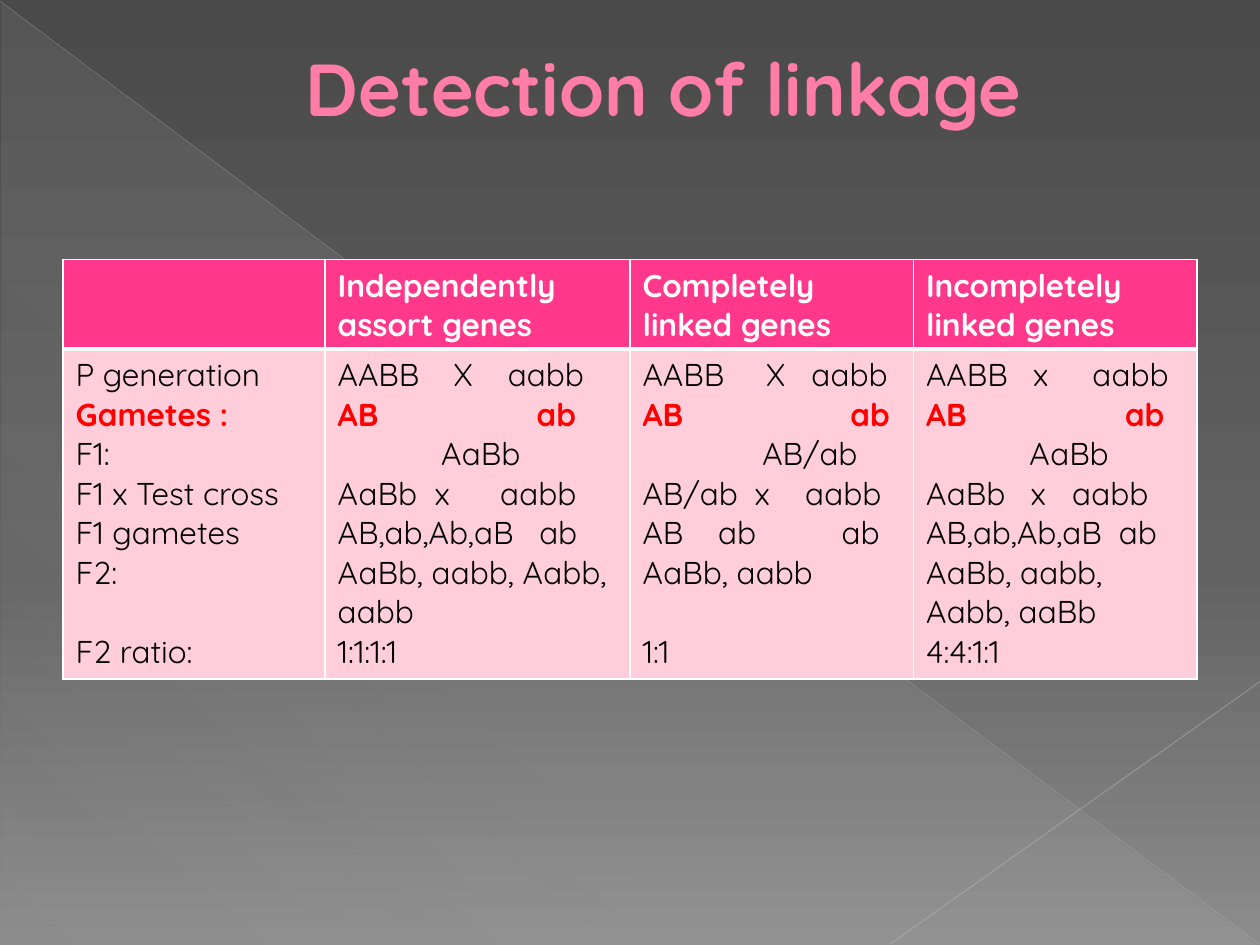
from lxml import etree
from pptx import Presentation
from pptx import util as u
from pptx.dml.color import RGBColor
from pptx.enum import shapes, text
from pptx.oxml import ns, parse_xml

WHITE, BLACK, RED = "FFFFFF", "000000", "FF0000"
HEADER_FILL, BODY_FILL = "FF388C", "FFCEDA"
TITLE_PINK, TITLE_EDGE = "FF7DA7", "B12761"
COLUMN_WIDTHS = [2.08, 2.42, 2.25, 2.25]
ROW_HEIGHTS = [0.71, 2.62]
HEADINGS = ["", "Independently assort genes", "Completely linked genes",
            "Incompletely linked genes"]
LINE_GAP = 22.5

COLUMNS = [
    [("P generation",), ("Gametes :",), ("F1:",), ("F1 x Test cross",),
     ("F1 gametes",), ("F2:",), ("F2 ratio:",)],
    [("AABB\tX\taabb", 0.92, 1.35), ("AB\tab", 1.58), ("\tAaBb", 0.82),
     ("AaBb\tx\taabb", 0.77, 1.29), ("AB,ab,Ab,aB\tab", 1.6),
     ("AaBb, aabb, Aabb, aabb",), ("1:1:1:1",)],
    [("AABB\tX\taabb", 0.98, 1.34), ("AB\tab", 1.65), ("\tAB/ab", 0.95),
     ("AB/ab\tx\taabb", 0.89, 1.29), ("AB\tab\tab", 0.6, 1.58),
     ("AaBb, aabb",), ("1:1",)],
    [("AABB\tx\taabb", 0.85, 1.32), ("AB\tab", 1.58), ("\tAaBb", 0.82),
     ("AaBb\tx\taabb", 0.83, 1.16), ("AB,ab,Ab,aB\tab", 1.53),
     ("AaBb, aabb, Aabb, aaBb",), ("4:4:1:1",)],
]
SHORT_COLUMNS = (0, 2)
GAMETES_ROW, RATIO_ROW = 1, 6


def color(value):
    return RGBColor.from_string(value)


def element(tag, parent, **attributes):
    return etree.SubElement(parent, ns.qn(tag),
                            {key: str(value) for key, value in attributes.items()})


def gradient(stops, angle):
    fill = parse_xml(f"<a:gradFill {ns.nsdecls('a')} rotWithShape='1'/>")
    stop_list = element("a:gsLst", fill)
    for place, value, opacity in stops:
        stop = element("a:gs", stop_list, pos=place * 1000)
        element("a:alpha", element("a:srgbClr", stop, val=value), val=opacity * 1000)
    element("a:lin", fill, ang=angle * 60000, scaled=0)
    return fill


class SlideKit:
    """Draws styled elements on the current slide."""

    def __init__(self, page, font="Quicksand"):
        self.page = page
        self.font = font

    def swap_fill(self, parent, fill):
        solid = parent.find(ns.qn("a:solidFill"))
        parent.replace(solid, fill)

    def background(self, stops, angle):
        self.page.background.fill.solid()
        properties = self.page._element.cSld.find(
            f"{ns.qn('p:bg')}/{ns.qn('p:bgPr')}")
        self.swap_fill(properties, gradient(stops, angle))

    def triangle(self, left, top, width, height, stops, angle):
        shape = self.page.shapes.add_shape(
            shapes.MSO_SHAPE.RIGHT_TRIANGLE,
            *map(u.Inches, (left, top, width, height)))
        shape.shadow.inherit = False
        shape.line.fill.background()
        shape.fill.solid()
        self.swap_fill(shape._element.spPr, gradient(stops, angle))

    def line(self, start, end, value, width, opacity):
        connector = self.page.shapes.add_connector(
            shapes.MSO_CONNECTOR.STRAIGHT, *map(u.Inches, (*start, *end)))
        connector.line.width = u.Pt(width)
        connector.line.color.rgb = color(value)
        properties = connector._element.spPr
        shade = properties.find(f".//{ns.qn('a:srgbClr')}")
        element("a:alpha", shade, val=opacity * 1000)
        element("a:effectLst", properties)

    def add_span(self, para, words, value, size=18, bold=False):
        span = para.add_run()
        span.text = words
        formats = {"name": self.font, "size": u.Pt(size), "bold": bold}
        for key, setting in formats.items():
            setattr(span.font, key, setting)
        span.font.color.rgb = color(value)
        return span

    def title(self, words, left, top, width, height):
        box = self.page.shapes.add_textbox(*map(u.Inches, (left, top, width, height)))
        frame = box.text_frame
        formats = {"word_wrap": True, "vertical_anchor": text.MSO_ANCHOR.TOP,
                   "margin_left": u.Inches(0.63)}
        for key, setting in formats.items():
            setattr(frame, key, setting)
        para = frame.paragraphs[0]
        para.alignment = text.PP_ALIGN.CENTER
        span = self.add_span(para, words, TITLE_PINK, 42, True)
        edge = parse_xml(f"<a:ln {ns.nsdecls('a')} w='{u.Pt(0.5)}'/>")
        element("a:srgbClr", element("a:solidFill", edge), val=TITLE_EDGE)
        span._r.get_or_add_rPr().insert(0, edge)

    def table(self, left, top, widths, heights):
        frame = self.page.shapes.add_table(
            len(heights), len(widths),
            *map(u.Inches, (left, top, sum(widths), sum(heights))))
        for column, width in zip(frame.table.columns, widths):
            column.width = u.Inches(width)
        for row, height in zip(frame.table.rows, heights):
            row.height = u.Inches(height)
        return frame.table

    def cell(self, cell, fill, top, bottom):
        cell.fill.solid()
        cell.fill.fore_color.rgb = color(fill)
        borders = {"L": 1, "R": 1, "T": top, "B": bottom}
        for index, (side, width) in enumerate(borders.items()):
            border = parse_xml(f"<a:ln{side} {ns.nsdecls('a')} w='{u.Pt(width)}'/>")
            element("a:srgbClr", element("a:solidFill", border), val=WHITE)
            cell._tc.tcPr.insert(index, border)

    def tabs(self, para, stops):
        tab_list = element("a:tabLst", para._p.get_or_add_pPr())
        for stop in stops:
            element("a:tab", tab_list, pos=u.Inches(stop), algn="l")


def main():
    deck = Presentation()
    deck.slide_width, deck.slide_height = u.Inches(10), u.Inches(7.5)
    kit = SlideKit(deck.slides.add_slide(deck.slide_layouts[6]))

    kit.background([(0, "4A4A4A", 100), (60, "626262", 100), (100, "8C8C8C", 100)], 90)
    kit.triangle(0.01, 0.02, 9.98, 7.48,
                 [(0, "D2D2D2", 10), (70, "D2D2D2", 8), (100, "D2D2D2", 1)], 133)
    kit.line((0, 0.01), (9.99, 7.49), "BFBFBF", 0.39, 35)
    kit.line((10, 5.41), (7.07, 7.49), "C6C6C6", 0.47, 45)
    kit.title("Detection of linkage", 0.5, 0.29, 9, 1.53)

    table = kit.table(0.5, 2.06, COLUMN_WIDTHS, ROW_HEIGHTS)
    for index, (heading, entries) in enumerate(zip(HEADINGS, COLUMNS)):
        header, body = table.cell(0, index), table.cell(1, index)
        kit.cell(header, HEADER_FILL, 1, 3)
        kit.cell(body, BODY_FILL, 3, 1)
        if heading:
            kit.add_span(header.text_frame.paragraphs[0], heading, WHITE, bold=True)
        for row, (words, *stops) in enumerate(entries):
            frame = body.text_frame
            para = frame.add_paragraph() if row else frame.paragraphs[0]
            if row == RATIO_ROW and index in SHORT_COLUMNS:
                para.space_before = u.Pt(LINE_GAP)
            if stops:
                kit.tabs(para, stops)
            gametes = row == GAMETES_ROW
            kit.add_span(para, words, RED if gametes else BLACK, bold=gametes)

    deck.save("out.pptx")


if __name__ == "__main__":
    main()
